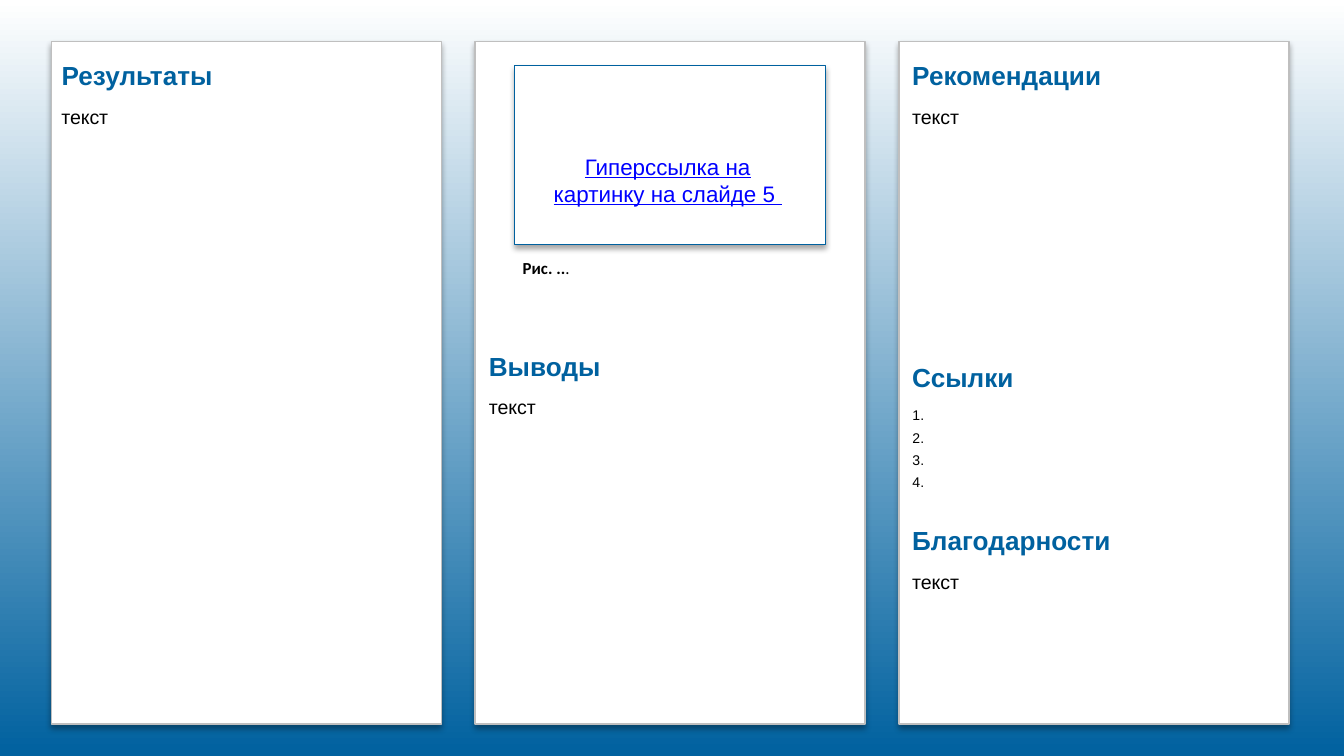
from dataclasses import dataclass

from lxml.etree import SubElement
from pptx import Presentation
from pptx.dml.color import RGBColor
from pptx.enum.shapes import MSO_SHAPE
from pptx.enum.text import MSO_ANCHOR, MSO_AUTO_SIZE, PP_ALIGN
from pptx.oxml.ns import qn
from pptx.util import Cm, Pt

COLORS = {
    "accent": "00619F",
    "paper": "FFFFFF",
    "border": "BFBFBF",
    "text": "000000",
    "link": "0000FF",
}
PANEL_LEFT, PANEL_TOP, PANEL_W, PANEL_H = 0.97, 0.79, 7.37, 12.9
PANEL_PITCH = 8.01
HEADING_W, HEADING_H = 6.88, 0.86
BODY_W = 7.11


@dataclass
class Box:
    left: float
    top: float
    width: float
    height: float

    def emu(self) -> tuple:
        return Cm(self.left), Cm(self.top), Cm(self.width), Cm(self.height)


@dataclass
class Section:
    heading: str
    left: float
    top: float
    height: float
    lines: tuple = ("текст",)
    size: float = 10.5
    after: float = 6
    title: object = None
    body: object = None


def rgb(name: str) -> RGBColor:
    return RGBColor.from_string(COLORS[name])


def add_shadow(sp) -> None:
    effects = SubElement(sp._element.spPr, qn("a:effectLst"))
    outer = SubElement(effects, qn("a:outerShdw"), blurRad="40000",
                       dist="23000", dir="5400000", rotWithShape="0")
    color = SubElement(outer, qn("a:srgbClr"), val=COLORS["text"])
    SubElement(color, qn("a:alpha"), val="35000")


def add_card(shapes, box: Box, line: str) -> None:
    sp = shapes.add_shape(MSO_SHAPE.RECTANGLE, *box.emu())
    sp.fill.solid()
    sp.fill.fore_color.rgb = rgb("paper")
    sp.line.color.rgb = rgb(line)
    sp.line.width = Pt(0.75)
    add_shadow(sp)


def add_text(shapes, box: Box, *lines, holder=None, size=10.5, color="text",
             font="Arial", bold=False, underline=False, after=0,
             align=PP_ALIGN.LEFT):
    if holder is None:
        sp = shapes.add_textbox(*box.emu())
    else:
        sp = holder
        sp.left, sp.top, sp.width, sp.height = box.emu()
        shapes._spTree.append(sp._element)
    tf = sp.text_frame
    tf.word_wrap = True
    tf.auto_size = MSO_AUTO_SIZE.NONE
    tf.vertical_anchor = MSO_ANCHOR.TOP
    for i, line in enumerate(lines):
        p = tf.add_paragraph() if i else tf.paragraphs[0]
        p.alignment = align
        p.space_before = Pt(0)
        p.space_after = Pt(after)
        if holder is not None:
            pPr = p._p.get_or_add_pPr()
            pPr.set("marL", "0")
            pPr.set("indent", "0")
            SubElement(pPr, qn("a:buNone"))
        r = p.add_run()
        r.text = line
        r.font.name = font
        r.font.size = Pt(size)
        r.font.bold = bold
        r.font.underline = underline
        r.font.color.rgb = rgb(color)
    return sp


def add_section(shapes, sec: Section) -> None:
    add_text(shapes, Box(sec.left, sec.top, HEADING_W, HEADING_H), sec.heading,
             holder=sec.title, size=14, color="accent", bold=True, after=6)
    add_text(shapes, Box(sec.left, sec.top + HEADING_H, BODY_W, sec.height),
             *sec.lines, holder=sec.body, size=sec.size, after=sec.after)


def add_figure(shapes) -> None:
    group = shapes.add_group_shape()
    add_card(group.shapes, Box(9.73, 1.24, 5.87, 3.38), "accent")
    add_text(group.shapes, Box(10.08, 2.77, 5.08, 1.27),
             "Гиперссылка на картинку на слайде 5 ", size=12, color="link",
             underline=True, align=PP_ALIGN.CENTER)
    caption = add_text(shapes, Box(9.63, 4.75, 6.05, 0.64), "Рис. ..",
                       size=9, font="Calibri", bold=True)
    r = caption.text_frame.paragraphs[0].add_run()
    r.text = "."
    r.font.name = "Calibri"
    r.font.size = Pt(9)
    r.font.color.rgb = rgb("text")


def set_background(s) -> None:
    fill = s.background.fill
    fill.gradient()
    fill.gradient_angle = 270
    for stop, position, name in zip(fill.gradient_stops, (0, 1),
                                    ("paper", "accent")):
        stop.position = position
        stop.color.rgb = rgb(name)


def main() -> None:
    prs = Presentation()
    prs.slide_width, prs.slide_height = Cm(25.4), Cm(14.29)
    s = prs.slides.add_slide(prs.slide_layouts[1])
    title, body = s.shapes.title, s.placeholders[1]
    set_background(s)

    for i in range(3):
        left = PANEL_LEFT + i * PANEL_PITCH
        add_card(s.shapes, Box(left, PANEL_TOP, PANEL_W, PANEL_H), "border")

    add_figure(s.shapes)

    left, middle, right = 0.91, 8.99, 16.99
    sections = [
        Section("Результаты", left, 0.99, 11.3, title=title),
        Section("Выводы", middle, 6.49, 6.45),
        Section("Рекомендации", right, 0.99, 4.67),
        Section("Ссылки", right, 6.7, 2.29, ("1.", "2.", "3.", "4."),
                size=7.5, after=3, body=body),
        Section("Благодарности", right, 9.79, 2.69),
    ]
    for sec in sections:
        add_section(s.shapes, sec)

    prs.save("out.pptx")


if __name__ == "__main__":
    main()
